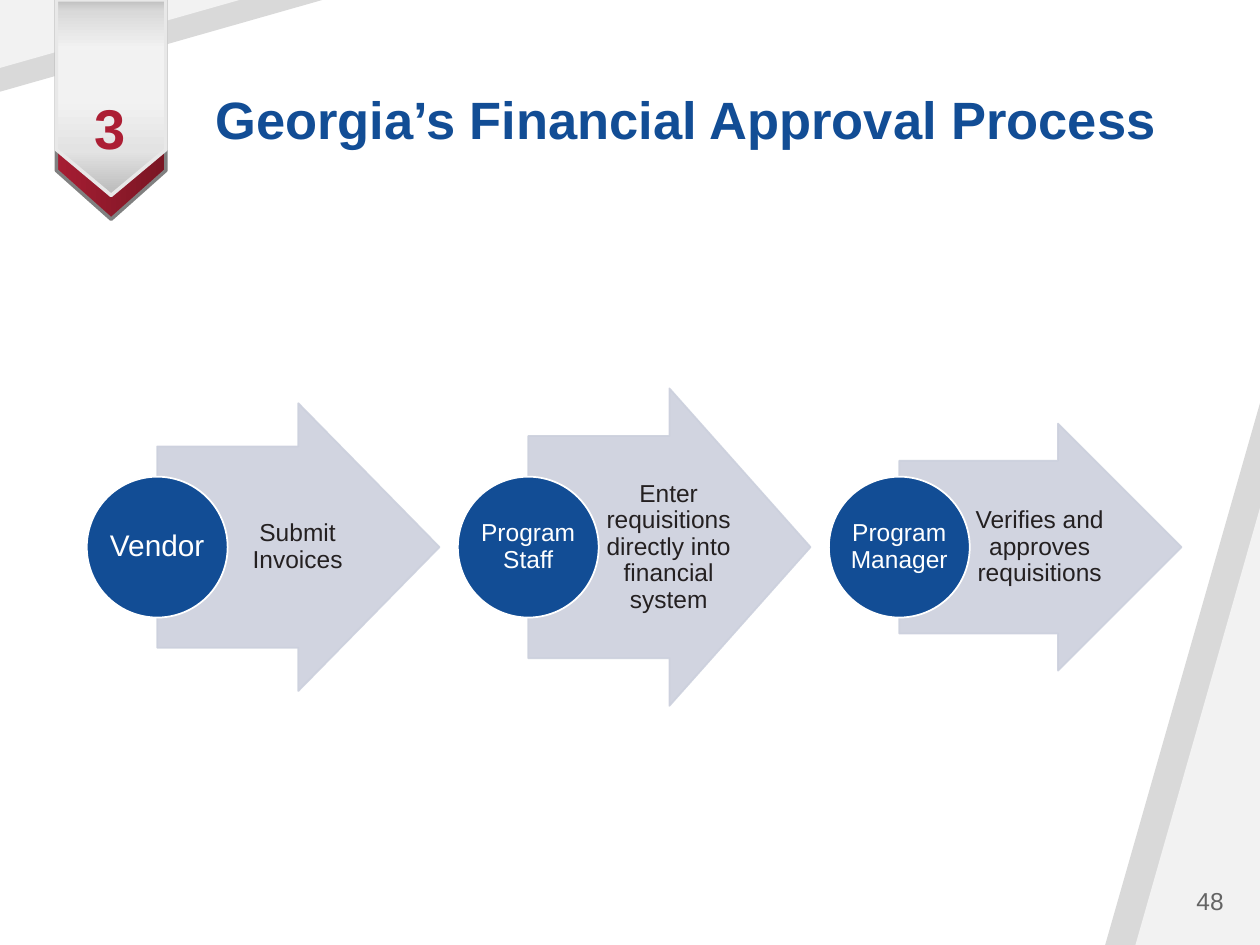
"""Build the slide on Georgia's financial approval process."""
from dataclasses import dataclass

from lxml.etree import SubElement
from pptx import Presentation
from pptx.dml.color import RGBColor
from pptx.enum.shapes import MSO_SHAPE
from pptx.enum.text import MSO_ANCHOR, PP_ALIGN
from pptx.oxml.ns import qn
from pptx.util import Cm, Pt


@dataclass(frozen=True)
class Theme:
    font: str = "Arial"
    blue: str = "124D95"
    red: str = "AC1E34"
    arrow: str = "CCD0DD"
    ink: str = "242021"
    muted: str = "646464"
    white: str = "FFFFFF"
    band: str = "D9D9D9"
    corner: str = "F2F2F2"
    ribbon_edge: str = "808080"
    flap_edge: str = "E8E8E8"
    ribbon_stops: tuple = ((0, "7A1623"), (100, "A61D33"))
    flap_stops: tuple = ((0, "BFBFBF"), (6, "D9D9D9"), (25, "F2F2F2"),
                         (53, "F1F1F1"), (77, "E3E3E3"), (97, "BFBFBF"))
    title_size: int = 30
    number_size: int = 32
    role_size: int = 17
    body_size: int = 14


theme = Theme()


def write(holder, text, size, color, align=PP_ALIGN.CENTER, bold=False,
          margins=(0, 0, 0, 0), spacing=0.9):
    frame = holder.text_frame
    left, top, right, bottom = (Cm(margin) for margin in margins)
    paragraph = frame.paragraphs[0]
    run = paragraph.add_run()
    run.text = text
    run.font.color.rgb = RGBColor.from_string(color)
    formats = {
        frame: {"word_wrap": True, "vertical_anchor": MSO_ANCHOR.MIDDLE,
                "margin_left": left, "margin_top": top,
                "margin_right": right, "margin_bottom": bottom},
        paragraph: {"alignment": align, "line_spacing": spacing},
        run.font: {"name": theme.font, "size": Pt(size), "bold": bold},
    }
    for target, values in formats.items():
        for key, value in values.items():
            setattr(target, key, value)


def paint(shape, fill, line=None, width=1, opacity=100):
    shape.shadow.inherit = False
    shape.fill.solid()
    shape.fill.fore_color.rgb = RGBColor.from_string(fill)
    if line:
        shape.line.color.rgb = RGBColor.from_string(line)
        shape.line.width = Pt(width)
    else:
        shape.line.fill.background()
    if opacity < 100:
        for color in shape._element.spPr.iter(qn("a:srgbClr")):
            SubElement(color, qn("a:alpha"), val=str(opacity * 1000))


deck = Presentation()
deck.slide_width, deck.slide_height = Cm(25.4), Cm(19.05)
slide = deck.slides.add_slide(deck.slide_layouts[6])
shapes = slide.shapes

corners = [
    (theme.band, [(25.4, 8.13), (25.4, 19.05), (22.28, 19.05)]),
    (theme.corner, [(25.4, 10.24), (25.4, 19.05), (22.89, 19.05)]),
    (theme.band, [(0, 0), (6.5, 0), (0, 1.85)]),
    (theme.corner, [(0, 0), (4.83, 0), (0, 1.37)]),
]
for color, points in corners:
    start, *others = [(Cm(x), Cm(y)) for x, y in points]
    outline = shapes.build_freeform(*start)
    outline.add_line_segments(others, close=True)
    paint(outline.convert_to_shape(), color)

ribbon_center, ribbon_width = 2.24, 2.21
ribbon_layers = [
    (4.42, 0.445, theme.ribbon_edge, theme.ribbon_stops, 270),
    (3.94, 0.418, theme.flap_edge, theme.flap_stops, 0),
]
for length, point, edge, stops, angle in ribbon_layers:
    ribbon = shapes.add_shape(
        MSO_SHAPE.PENTAGON, Cm(ribbon_center - length / 2),
        Cm((length - ribbon_width) / 2), Cm(length), Cm(ribbon_width))
    ribbon.rotation = 90
    ribbon.adjustments[0] = point
    paint(ribbon, theme.band, edge, 2)
    ribbon.fill.gradient()
    ribbon.fill.gradient_angle = angle
    stop_list = ribbon._element.spPr.find(".//" + qn("a:gsLst"))
    stop_list.clear()
    for position, color in stops:
        stop = SubElement(stop_list, qn("a:gs"), pos=str(position * 1000))
        SubElement(stop, qn("a:srgbClr"), val=color)

title = shapes.add_textbox(Cm(4.09), Cm(1.02), Cm(19.76), Cm(2.92))
write(title, "Georgia’s Financial Approval Process", theme.title_size, theme.blue,
      PP_ALIGN.LEFT, True, (0.25, 0.13, 0.25, 0.13))

section_number = shapes.add_textbox(Cm(0.94), Cm(1.45), Cm(2.57), Cm(2.24))
write(section_number, "3", theme.number_size, theme.red, bold=True, spacing=1.0)

first_left, pitch, middle = 1.75, 7.48, 11.03
diameter, arrow_width, label_width = 2.84, 5.69, 2.77
radius = diameter / 2
steps = [
    ("Vendor", theme.role_size, "Submit Invoices", 5.8),
    ("Program Staff", theme.body_size,
     "Enter requisitions directly into financial system", 6.4),
    ("Program Manager", theme.body_size,
     "Verifies and approves requisitions", 4.98),
]
for index, (role, role_size, action, arrow_height) in enumerate(steps):
    left = first_left + index * pitch
    arrow = shapes.add_shape(
        MSO_SHAPE.RIGHT_ARROW, Cm(left + radius), Cm(middle - arrow_height / 2),
        Cm(arrow_width), Cm(arrow_height))
    arrow.adjustments[0], arrow.adjustments[1] = 0.7, 0.5
    paint(arrow, theme.arrow, theme.arrow, opacity=90)

    label_height = arrow_height * 0.7
    label = shapes.add_textbox(Cm(left + diameter), Cm(middle - label_height / 2),
                               Cm(label_width), Cm(label_height))
    write(label, action, theme.body_size, theme.ink, margins=(0.1, 0.03, 0.05, 0.03))

    circle = shapes.add_shape(MSO_SHAPE.OVAL, Cm(left), Cm(middle - radius),
                              Cm(diameter), Cm(diameter))
    paint(circle, theme.blue, theme.white)
    write(circle, role, role_size, theme.white)

page_number = shapes.add_textbox(Cm(21.36), Cm(17.65), Cm(3.56), Cm(1.02))
write(page_number, "48", theme.body_size, theme.muted, PP_ALIGN.RIGHT,
      margins=(0.25, 0.13, 0.25, 0.13), spacing=1.0)

deck.save("out.pptx")
